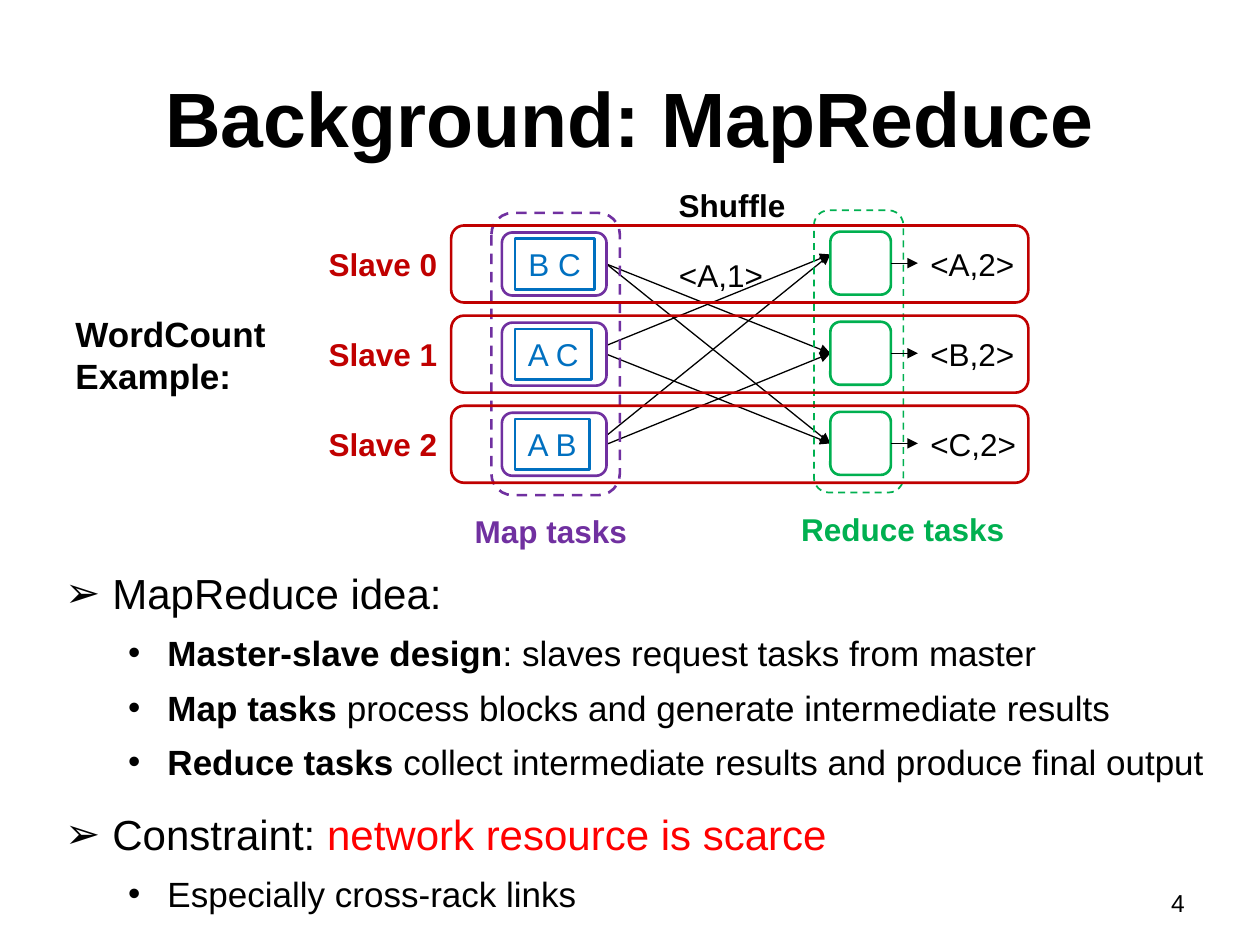
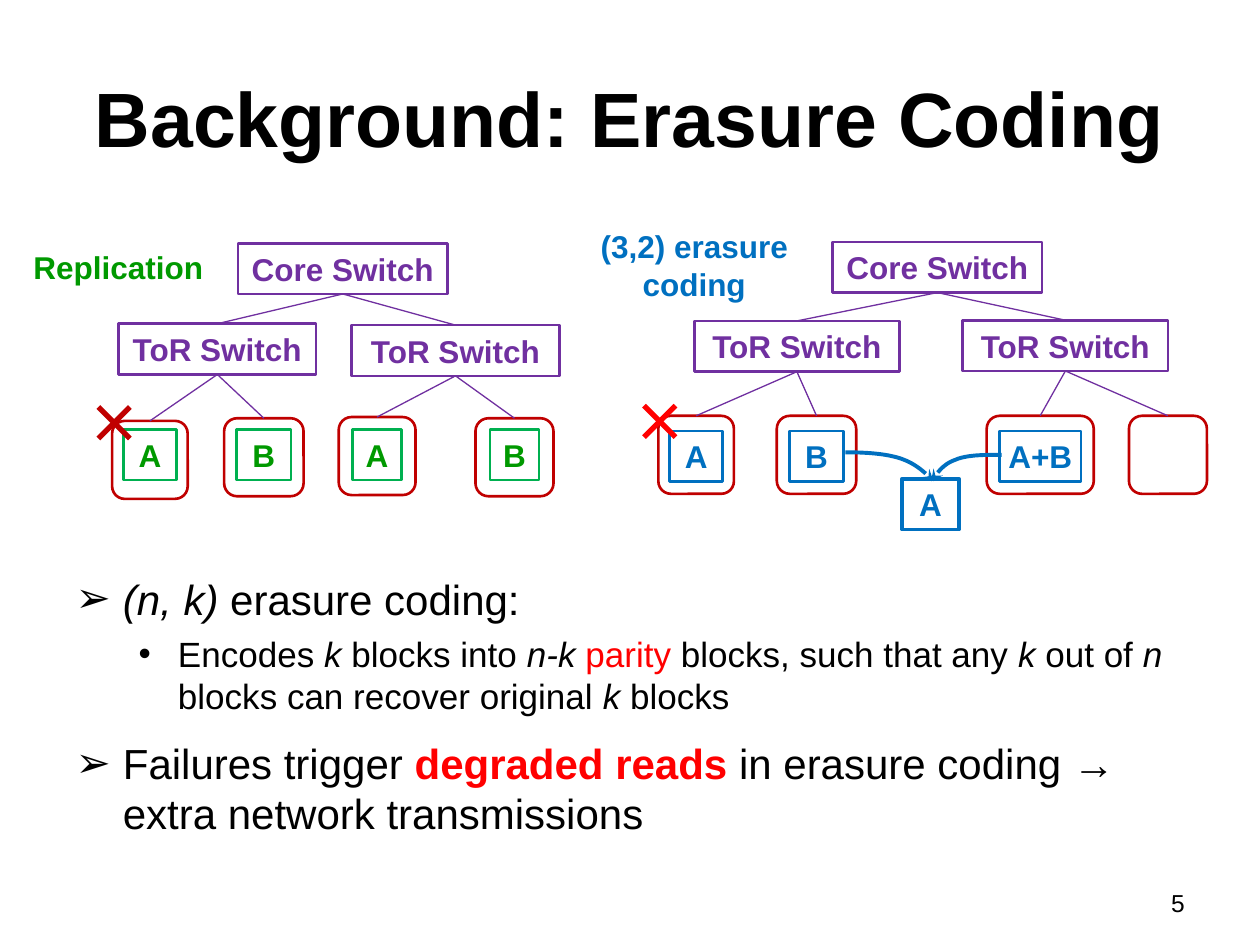
import lxml.etree
import pptx
import pptx.dml.color
import pptx.enum.dml
import pptx.enum.shapes
import pptx.enum.text
import pptx.oxml.ns
import pptx.util

Pt = pptx.util.Pt
RGBColor = pptx.dml.color.RGBColor
Shapes = pptx.enum.shapes.MSO_SHAPE
Align = pptx.enum.text.PP_ALIGN
Anchor = pptx.enum.text.MSO_ANCHOR

BLACK = RGBColor(0x00, 0x00, 0x00)
RED = RGBColor(0xFF, 0x00, 0x00)
DARK_RED = RGBColor(0xC0, 0x00, 0x00)
PURPLE = RGBColor(0x70, 0x30, 0xA0)
GREEN = RGBColor(0x00, 0xB0, 0x50)
DARK_GREEN = RGBColor(0x00, 0x99, 0x00)
BLUE = RGBColor(0x00, 0x70, 0xC0)

FONT = "Arial"
BOX_HEIGHT = 29
LEVELS = (
    {"size": 24, "margin": 27, "indent": -27, "before": 12, "bullet": "➢"},
    {"size": 20, "margin": 58.5, "indent": -22.5, "before": 5, "bullet": "•"},
)


class Deck:
    def __init__(self):
        self.presentation = pptx.Presentation()
        self.presentation.slide_width = Pt(720)
        self.presentation.slide_height = Pt(540)
        self.slide = None

    def place(self, shape, left, top, width, height):
        shape.left, shape.top = Pt(left), Pt(top)
        shape.width, shape.height = Pt(width), Pt(height)

    def format_font(self, font, size, color=BLACK, bold=False, italic=False):
        font.name, font.size = FONT, Pt(size)
        font.bold, font.italic = bold, italic
        font.color.rgb = color

    def set_text(self, shape, text, size, color, bold, align):
        shape.text_frame.text = text
        paragraph = shape.text_frame.paragraphs[0]
        paragraph.alignment = align
        for run in paragraph.runs:
            self.format_font(run.font, size, color, bold)

    def add_slide(self, title, number):
        self.slide = self.presentation.slides.add_slide(self.presentation.slide_layouts[1])
        shape = self.slide.shapes.title
        self.place(shape, 36, 21.6, 648, 90)
        shape.text_frame.auto_size = pptx.enum.text.MSO_AUTO_SIZE.NONE
        shape.text_frame.vertical_anchor = Anchor.MIDDLE
        self.set_text(shape, title, 44, BLACK, True, Align.CENTER)
        self.label(str(number), 516, 504, 168, 25, size=14, bold=False, align=Align.RIGHT,
                   wrap=True)

    def bullets(self, items, left, top, width, height, spacing):
        shape = self.slide.placeholders[1]
        self.place(shape, left, top, width, height)
        frame = shape.text_frame
        frame.auto_size = pptx.enum.text.MSO_AUTO_SIZE.NONE
        frame.vertical_anchor = Anchor.TOP
        for index, (level, pieces) in enumerate(items):
            paragraph = frame.add_paragraph() if index else frame.paragraphs[0]
            style = LEVELS[level]
            paragraph.level = level
            paragraph.alignment = Align.LEFT
            paragraph.line_spacing = spacing
            paragraph.space_before = Pt(style["before"])
            properties = paragraph._p.get_or_add_pPr()
            properties.set("marL", str(Pt(style["margin"])))
            properties.set("indent", str(Pt(style["indent"])))
            bullet = lxml.etree.SubElement(properties, pptx.oxml.ns.qn("a:buChar"))
            bullet.set("char", style["bullet"])
            for text, marks in pieces:
                run = paragraph.add_run()
                run.text = text
                color = RED if "r" in marks else BLACK
                self.format_font(run.font, style["size"], color, "b" in marks, "i" in marks)

    def label(self, text, left, top, width, height=BOX_HEIGHT, color=BLACK, size=18,
              bold=True, align=Align.LEFT, wrap=False):
        shape = self.slide.shapes.add_textbox(Pt(left), Pt(top), Pt(width), Pt(height))
        shape.text_frame.word_wrap = wrap
        self.set_text(shape, text, size, color, bold, align)

    def outline(self, kind, left, top, width, height, color, weight=1.5, dashed=False):
        shape = self.slide.shapes.add_shape(kind, Pt(left), Pt(top), Pt(width), Pt(height))
        self.stroke(shape, color, weight)
        if dashed:
            shape.line.dash_style = pptx.enum.dml.MSO_LINE.DASH
        return shape

    def rounded(self, left, top, width, height, color, weight=1.5, dashed=False):
        return self.outline(Shapes.ROUNDED_RECTANGLE, left, top, width, height,
                            color, weight, dashed)

    def box(self, text, left, top, width, color, text_color=None, bold=True, weight=1.5):
        shape = self.outline(Shapes.RECTANGLE, left, top, width, BOX_HEIGHT, color, weight)
        frame = shape.text_frame
        frame.margin_left = frame.margin_right = 0
        frame.word_wrap = False
        frame.vertical_anchor = Anchor.MIDDLE
        self.set_text(shape, text, 18, text_color or color, bold, Align.CENTER)
        return shape

    def stroke(self, shape, color, weight):
        shape.fill.background()
        shape.shadow.inherit = False
        shape.line.color.rgb = color
        shape.line.width = Pt(weight)

    def arrowhead(self, shape, kind):
        line = shape.line._get_or_add_ln()
        lxml.etree.SubElement(line, pptx.oxml.ns.qn("a:tailEnd")).set("type", kind)

    def line(self, start, end, color=BLACK, weight=0.75, arrow=False):
        connector = self.slide.shapes.add_connector(
            pptx.enum.shapes.MSO_CONNECTOR.STRAIGHT, *map(Pt, (*start, *end)))
        connector.line.color.rgb = color
        connector.line.width = Pt(weight)
        if arrow:
            self.arrowhead(connector, "triangle")
        lxml.etree.SubElement(connector._element.spPr, pptx.oxml.ns.qn("a:effectLst"))
        return connector

    def link(self, parent, child):
        connector = self.line((0, 0), (0, 0), PURPLE)
        connector.begin_connect(parent, 2)
        connector.end_connect(child, 0)

    def cross(self, x, y, color, half=9):
        for slope in (half, -half):
            self.line((x - half, y - slope), (x + half, y + slope), color, 3)

    def curve(self, points, color, weight, steps=12):
        vertices = []
        for first in range(0, len(points) - 1, 3):
            segment = points[first:first + 4]
            for step in range(1, steps + 1):
                t = step / steps
                weights = ((1 - t) ** 3, 3 * t * (1 - t) ** 2, 3 * t * t * (1 - t), t ** 3)
                vertices.append(tuple(
                    Pt(sum(w * point[axis] for w, point in zip(weights, segment)))
                    for axis in (0, 1)))
        builder = self.slide.shapes.build_freeform(*map(Pt, points[0]))
        builder.add_line_segments(vertices, close=False)
        shape = builder.convert_to_shape()
        self.stroke(shape, color, weight)
        self.arrowhead(shape, "stealth")

    def switch_tree(self, core, racks, nodes, block_top, line_color, text_color):
        core_box = self.box("Core Switch", *core, PURPLE)
        rack_boxes = [self.box("ToR Switch", *rack, PURPLE) for rack in racks]
        for rack_box in rack_boxes:
            self.link(core_box, rack_box)
        for index, (center, top, width, block_width, text) in enumerate(nodes):
            node = self.rounded(center - width / 2, top, width, 44.6, DARK_RED)
            self.link(rack_boxes[index // 2], node)
            if text:
                self.box(text, center - block_width / 2, block_top, block_width,
                         line_color, text_color)


def build_mapreduce(deck):
    deck.add_slide("Background: MapReduce", 4)
    deck.bullets([
        (0, [("MapReduce idea:", "")]),
        (1, [("Master-slave design", "b"), (": slaves request tasks from master", "")]),
        (1, [("Map tasks ", "b"),
             ("process blocks and generate intermediate results", "")]),
        (1, [("Reduce tasks ", "b"),
             ("collect intermediate results and produce final output", "")]),
        (0, [("Constraint: ", ""), ("network resource is scarce", "r")]),
        (1, [("Especially cross-rack links", "")]),
    ], 30, 318, 672, 222, 1.1)
    deck.label("WordCount Example:", 36, 175, 132, 55, size=20, wrap=True)

    centers = [150.9 + 51.5 * row for row in range(3)]
    map_right, reduce_left, reduce_width = 346.6, 474.5, 34.6
    for source, target in ((0, 1), (0, 2), (1, 2), (2, 1), (1, 0), (2, 0)):
        rise = 0 if target else 5
        deck.line((map_right, centers[source] - rise),
                  (reduce_left, centers[target] - rise - 0.5), arrow=True)

    deck.rounded(280.8, 121.7, 73.4, 161.3, PURPLE, dashed=True)
    deck.rounded(465.1, 120.2, 51.1, 161.3, GREEN, 1, dashed=True)
    rows = (("B C", 45.4, "<A,2>"), ("A C", 44, "<B,2>"), ("A B", 42.6, "<C,2>"))
    for index, (center, (block, block_width, result)) in enumerate(zip(centers, rows)):
        deck.rounded(286.8, center - 18, 59.8, 36, PURPLE)
        deck.rounded(reduce_left, center - 18.5, reduce_width, 36, GREEN)
        deck.rounded(257.8, center - 22, 329.8, 44, DARK_RED)
        deck.box(block, 294.2, center - 14.5, block_width, BLUE, bold=False)
        deck.line((reduce_left + reduce_width, center - 0.5), (524.5, center - 0.5), arrow=True)
        deck.label(result, 524.5, center - 14.5, 63.4, bold=False)
        deck.label(f"Slave {index}", 180.7, center - 14.5, 77, color=DARK_RED)

    deck.label("<A,1>", 380.9, 142.6, 63.4, bold=False)
    deck.label("Shuffle", 380.2, 103, 76.3, align=Align.CENTER)
    deck.label("Map tasks", 264.2, 289, 102.2, color=PURPLE)
    deck.label("Reduce tasks", 450, 288, 131.8, color=GREEN, align=Align.CENTER)


def build_erasure_coding(deck):
    deck.add_slide("Background: Erasure Coding", 5)
    deck.bullets([
        (0, [("(n, k) ", "i"), ("erasure coding:", "")]),
        (1, [("Encodes ", ""), ("k", "i"), (" blocks into ", ""), ("n-k ", "i"),
             ("parity", "r"), (" blocks, such that any ", ""), ("k", "i"),
             (" out of ", ""), ("n", "i"), (" blocks can recover original ", ""),
             ("k ", "i"), ("blocks", "")]),
        (0, [("Failures trigger ", ""), ("degraded reads", "br"),
             (" in erasure coding → extra network transmissions", "")]),
    ], 36, 324, 648, 174, 1.0)

    deck.switch_tree(
        (136.1, 139, 119.5),
        ((67.7, 185, 113), (200.9, 185.8, 118.8)),
        ((85.7, 240.5, 43.2, 30.2, "A"), (150.8, 239, 45.4, 31, "B"),
         (215.5, 238.3, 43.9, 28.1, "A"), (294, 239, 44.6, 28.1, "B")),
        245.3, GREEN, DARK_GREEN)
    deck.label("Replication", 11.5, 138.2, 112.3, color=DARK_GREEN, align=Align.CENTER)
    deck.cross(65.2, 241.6, DARK_RED)

    deck.switch_tree(
        (475.9, 138.2, 119.5),
        ((396.7, 183.4, 117.4), (550.1, 183, 117.4)),
        ((397.8, 237.6, 43.2, 30.2, "A"), (466.6, 237.6, 45.4, 31, "B"),
         (594.4, 237.6, 61.2, 46.8, "A+B"), (667.4, 237.6, 44.6, 0, "")),
        246.2, BLUE, BLUE)
    deck.label("(3,2) erasure coding", 319.7, 126, 154, 51, color=BLUE,
               align=Align.CENTER, wrap=True)
    deck.cross(377, 240.8, RED)

    deck.curve([(483.1, 258.5), (494.6, 258.5), (506.2, 259.2), (514.8, 262.1),
                (523.4, 265), (528.5, 270), (533.5, 275)], BLUE, 2.25)
    deck.curve([(572.4, 259.9), (562.3, 259.9), (552.2, 259.9), (545.8, 262.8),
                (539.3, 265), (535.7, 270), (532.1, 275)], BLUE, 2.25)
    deck.box("A", 515.5, 273.6, 32.4, BLUE, weight=2.25)


def main():
    deck = Deck()
    build_mapreduce(deck)
    build_erasure_coding(deck)
    deck.presentation.save("out.pptx")


if __name__ == "__main__":
    main()
